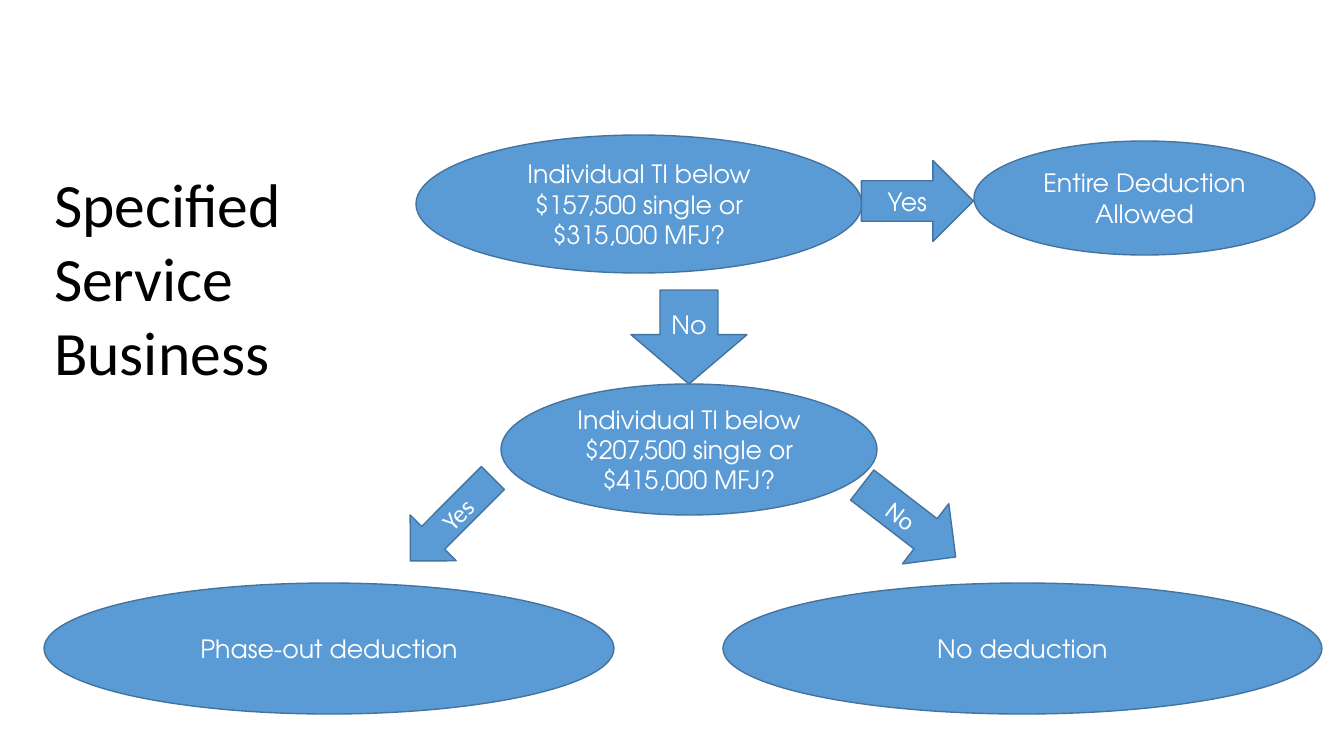
from dataclasses import dataclass

from pptx import Presentation
from pptx.dml.color import RGBColor
from pptx.enum.shapes import MSO_SHAPE
from pptx.enum.text import MSO_ANCHOR, MSO_AUTO_SIZE, PP_ALIGN
from pptx.util import Emu, Pt

OVAL, DOWN_ARROW = MSO_SHAPE.OVAL, MSO_SHAPE.DOWN_ARROW
MIDDLE, TOP = MSO_ANCHOR.MIDDLE, MSO_ANCHOR.TOP
CENTER, LEFT = PP_ALIGN.CENTER, PP_ALIGN.LEFT
GROW = MSO_AUTO_SIZE.SHAPE_TO_FIT_TEXT


@dataclass(frozen=True)
class Theme:
    fill: RGBColor = RGBColor(0x5B, 0x9B, 0xD5)
    outline: RGBColor = RGBColor(0x43, 0x73, 0x9E)
    label: RGBColor = RGBColor(0xFF, 0xFF, 0xFF)
    heading: RGBColor = RGBColor(0, 0, 0)
    label_size: Pt = Pt(18)
    heading_size: Pt = Pt(44)
    geometric: str = "TeX Gyre Adventor"
    plain: str = "Calibri"


THEME = Theme()
PX = 914400 / 100.8
SLIDE_SIZE = (1344, 756)

HEADING = ("Specified Service Business", (44, 161, 340, 234))

# text, (left, top, width, height)
STEPS = [
    ("Individual TI below $157,500 single or $315,000 MFJ?", (416, 135, 446, 138)),
    ("Entire Deduction Allowed", (974, 141, 341, 114)),
    ("Individual TI below $207,500 single or $415,000 MFJ?", (501, 384, 376, 131)),
    ("No deduction", (723, 583, 599, 131)),
    ("Phase-out deduction", (44, 583, 570, 131)),
]

# text, (left, top, width, height), rotation, text direction, font, head ratio
ANSWERS = [
    ("Yes", (877, 145, 81, 112), 270, "vert", THEME.geometric, 0.5),
    ("No", (631, 290, 116, 94), 0, "horz", THEME.geometric, 0.525),
    ("Yes", (419, 461, 65, 117), 44.9, "vert270", THEME.plain, 0.5),
    ("No", (871, 462, 76, 118), 307.6, "vert", THEME.plain, 0.5),
]


def emu(box):
    return [Emu(round(length * PX)) for length in box]


def write(shape, text, font_name, size, color, align, anchor):
    frame = shape.text_frame
    frame.word_wrap = True
    frame.vertical_anchor = anchor
    frame.text = text
    paragraph = frame.paragraphs[0]
    paragraph.alignment = align
    paragraph.font.name = font_name
    paragraph.font.size = size
    paragraph.font.color.rgb = color


def add_node(slide, preset, text, box, font_name):
    """Add a filled, outlined flowchart shape with a centred label."""
    node = slide.shapes.add_shape(preset, *emu(box))
    node.shadow.inherit = False
    node.fill.solid()
    node.fill.fore_color.rgb = THEME.fill
    node.line.color.rgb = THEME.outline
    node.line.width = Pt(1)
    write(node, text, font_name, THEME.label_size, THEME.label, CENTER, MIDDLE)
    return node


def main():
    deck = Presentation()
    deck.slide_width, deck.slide_height = emu(SLIDE_SIZE)
    slide = deck.slides.add_slide(deck.slide_layouts[5])

    text, box = HEADING
    heading = slide.shapes.title
    heading.left, heading.top, heading.width, heading.height = emu(box)
    write(heading, text, THEME.plain, THEME.heading_size, THEME.heading, LEFT, TOP)
    heading.text_frame.auto_size = GROW

    for text, box in STEPS:
        add_node(slide, OVAL, text, box, THEME.geometric)

    for text, box, rotation, direction, font_name, head in ANSWERS:
        arrow = add_node(slide, DOWN_ARROW, text, box, font_name)
        arrow.rotation = rotation
        arrow.adjustments[1] = head
        arrow.text_frame._txBody.bodyPr.set("vert", direction)

    deck.save("out.pptx")


if __name__ == "__main__":
    main()
